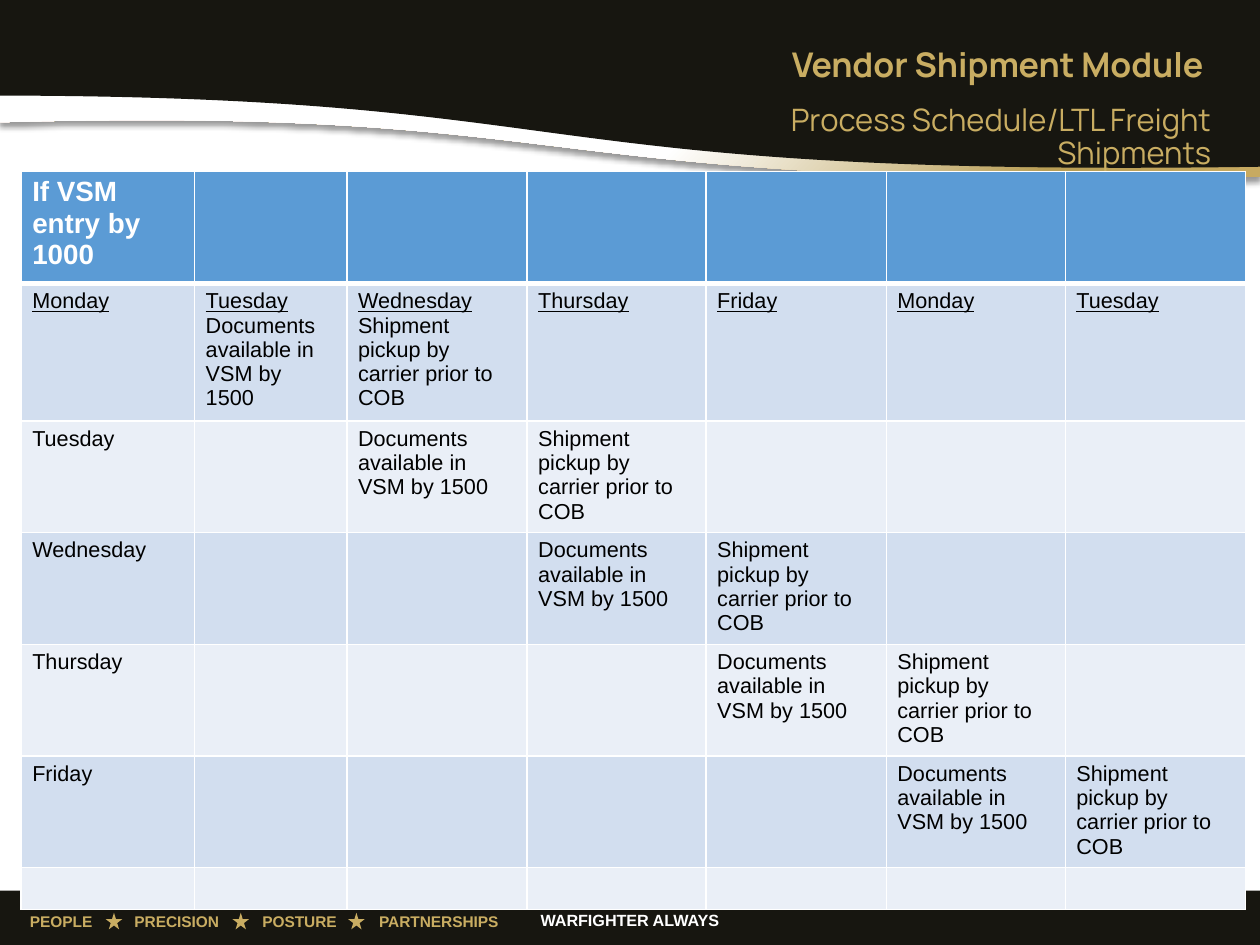
"""Build the vendor shipment schedule slide with its banner, table and footer."""
from dataclasses import dataclass

from lxml.etree import SubElement, fromstring
from pptx import Presentation
from pptx.dml.color import RGBColor
from pptx.enum.shapes import MSO_SHAPE
from pptx.enum.text import MSO_ANCHOR, PP_ALIGN
from pptx.oxml.ns import nsdecls, qn
from pptx.util import Inches, Pt

COLORS = {
    "black": "171610", "gold": "C9AD62", "white": "FFFFFF", "text": "000000",
    "header": "5B9BD5", "odd": "D2DEEF", "even": "EAEFF7",
}
WIDTH, HEIGHT = 11.33, 8.5
FOOTER_TOP = 8.01
COLUMNS = [1.56, 1.37, 1.62, 1.61, 1.62, 1.61, 1.62]
ROWS = [1.01, 1.19, 0.97, 0.97, 0.97, 0.97, 0.38]
DAYS = ["Monday", "Tuesday", "Wednesday", "Thursday", "Friday"]
DOCUMENTS = "Documents available in VSM by 1500"
PICKUP = "Shipment pickup by carrier prior to COB"
MOTTO = ["PEOPLE", "PRECISION", "POSTURE", "PARTNERSHIPS"]
MOTTO_TABS = [0.94, 2.09, 3.14]
STAR_LEFTS = [0.95, 2.09, 3.13]
GRADIENT = f"""<a:gradFill {nsdecls('a')} rotWithShape="1"><a:gsLst>
<a:gs pos="55000"><a:srgbClr val="FFFFFF"/></a:gs>
<a:gs pos="84000"><a:srgbClr val="B99E55"/></a:gs>
<a:gs pos="100000"><a:srgbClr val="C7AA61"/></a:gs></a:gsLst>
<a:path path="circle"><a:fillToRect r="100000" b="100000"/></a:path></a:gradFill>"""
SHADOW = f"""<a:outerShdw {nsdecls('a')} blurRad="50800" dist="38100" dir="5400000"
algn="t" rotWithShape="0"><a:srgbClr val="000000"><a:alpha val="40000"/></a:srgbClr></a:outerShdw>"""


@dataclass
class Label:
    text: str
    left: float
    top: float
    width: float
    height: float
    size: float
    font: str
    color: str
    bold: bool = False
    align: PP_ALIGN = PP_ALIGN.LEFT
    anchor: MSO_ANCHOR = MSO_ANCHOR.TOP
    spacing: float = 1.0
    tabs: tuple = ()


@dataclass
class Wave:
    top: float
    left_edge: float
    first_control: tuple
    second_control: tuple
    right_edge: float


BAND = Wave(0.59, 1.1, (5.49, 0.95), (4.54, 1.72), 1.59)
BANNER = Wave(0, 0.86, (5.46, 0.87), (4.52, 1.6), 1.5)
LABELS = [
    Label("WARFIGHTER ALWAYS", 4.47, 8.14, 2.39, 0.28, 10.5, "Arial", "white", True, PP_ALIGN.CENTER),
    Label("\t".join(MOTTO), 0.17, 8.15, 4.61, 0.28, 10, "Arial", "gold", True, tabs=tuple(MOTTO_TABS)),
    Label("Process Schedule/LTL Freight Shipments", 6.35, 0.89, 4.64, 0.47, 20, "Manrope", "gold",
          align=PP_ALIGN.RIGHT, spacing=0.9),
    Label("Vendor Shipment Module ", 2.66, 0.34, 8.32, 0.47, 22, "Manrope", "gold", True,
          PP_ALIGN.RIGHT, MSO_ANCHOR.MIDDLE),
]


def rgb(name: str) -> RGBColor:
    return RGBColor.from_string(COLORS[name])


def paint(shape, color: str) -> None:
    shape.fill.solid()
    shape.fill.fore_color.rgb = rgb(color)
    shape.line.fill.background()
    shape.shadow.inherit = False


def style_font(font, size: float, name: str, color: str, bold: bool) -> None:
    font.size, font.name, font.bold = Pt(size), name, bold
    font.color.rgb = rgb(color)


def draw_wave(page, wave: Wave):
    start, end = (0, wave.left_edge), (WIDTH, wave.right_edge)
    builder = page.shapes.build_freeform(Inches(WIDTH), Inches(wave.top))
    corners = [(0, wave.top), start, end]
    builder.add_line_segments([(Inches(x), Inches(y)) for x, y in corners], close=True)
    shape = builder.convert_to_shape()
    edge = list(shape.element.spPr.iter(qn("a:lnTo")))[2]
    points = "".join(f'<a:pt x="{Inches(x)}" y="{Inches(y - wave.top)}"/>'
                     for x, y in (wave.first_control, wave.second_control, end))
    curve = fromstring(f"<a:cubicBezTo {nsdecls('a')}>{points}</a:cubicBezTo>")
    edge.getparent().replace(edge, curve)
    return shape


def draw_band(page) -> None:
    band = draw_wave(page, BAND)
    band.line.fill.background()
    band.shadow.inherit = False
    properties = band.element.spPr
    properties.find(qn("a:custGeom")).addnext(fromstring(GRADIENT))
    properties.find(qn("a:effectLst")).append(fromstring(SHADOW))


def draw_shape(page, kind: MSO_SHAPE, left: float, top: float, width: float, height: float, color: str) -> None:
    shape = page.shapes.add_shape(kind, Inches(left), Inches(top), Inches(width), Inches(height))
    paint(shape, color)


def draw_label(page, label: Label) -> None:
    box = page.shapes.add_textbox(Inches(label.left), Inches(label.top), Inches(label.width), Inches(label.height))
    frame = box.text_frame
    frame.word_wrap = True
    frame.vertical_anchor = label.anchor
    para = frame.paragraphs[0]
    para.text = label.text
    para.alignment = label.align
    para.line_spacing = label.spacing
    if label.tabs:
        stops = SubElement(para._p.get_or_add_pPr(), qn("a:tabLst"))
        for stop in label.tabs:
            SubElement(stops, qn("a:tab"), pos=str(Inches(stop)), algn="l")
    for span in para.runs:
        style_font(span.font, label.size, label.font, label.color, label.bold)


def set_borders(cell, top: float, bottom: float) -> None:
    properties = cell._tc.get_or_add_tcPr()
    sides = {"lnL": 1, "lnR": 1, "lnT": top, "lnB": bottom}
    for position, (side, width) in enumerate(sides.items()):
        properties.insert(position, fromstring(
            f'<a:{side} {nsdecls("a")} w="{Pt(width)}"><a:solidFill>'
            f'<a:srgbClr val="{COLORS["white"]}"/></a:solidFill></a:{side}>'))


def cell_lines(row: int, column: int) -> list[str]:
    if row == 0:
        return ["If VSM entry by 1000"] if column == 0 else []
    if row > len(DAYS):
        return []
    lines = [DAYS[column % len(DAYS)]] if row == 1 else []
    if column == 0:
        return [DAYS[row - 1]]
    if column == row:
        lines.append(DOCUMENTS)
    elif column == row + 1:
        lines.append(PICKUP)
    return lines


def draw_schedule(page) -> None:
    frame = page.shapes.add_table(len(ROWS), len(COLUMNS), Inches(0.19), Inches(1.54),
                                  Inches(sum(COLUMNS)), Inches(sum(ROWS)))
    table = frame.table
    for column, width in enumerate(COLUMNS):
        table.columns[column].width = Inches(width)
    for row, height in enumerate(ROWS):
        table.rows[row].height = Inches(height)
        fill = "header" if row == 0 else ("even", "odd")[row % 2]
        for column in range(len(COLUMNS)):
            cell = table.cell(row, column)
            cell.margin_bottom = Inches(0.02)
            cell.fill.solid()
            cell.fill.fore_color.rgb = rgb(fill)
            set_borders(cell, 3 if row == 1 else 1, 3 if row == 0 else 1)
            cell.text_frame.text = "\n".join(cell_lines(row, column))
            for index, para in enumerate(cell.text_frame.paragraphs):
                for span in para.runs:
                    style_font(span.font, 14 if row else 18, "Arial", "text" if row else "white", row == 0)
                    span.font.underline = row == 1 and index == 0


def main() -> None:
    deck = Presentation()
    deck.slide_width, deck.slide_height = Inches(WIDTH), Inches(HEIGHT)
    page = deck.slides.add_slide(deck.slide_layouts[6])
    draw_band(page)
    paint(draw_wave(page, BANNER), "black")
    draw_shape(page, MSO_SHAPE.RECTANGLE, 0, FOOTER_TOP, WIDTH, HEIGHT - FOOTER_TOP, "black")
    for left in STAR_LEFTS:
        draw_shape(page, MSO_SHAPE.STAR_5_POINT, left, 8.21, 0.15, 0.15, "gold")
    for label in LABELS:
        draw_label(page, label)
    draw_schedule(page)
    deck.save("out.pptx")


if __name__ == "__main__":
    main()
